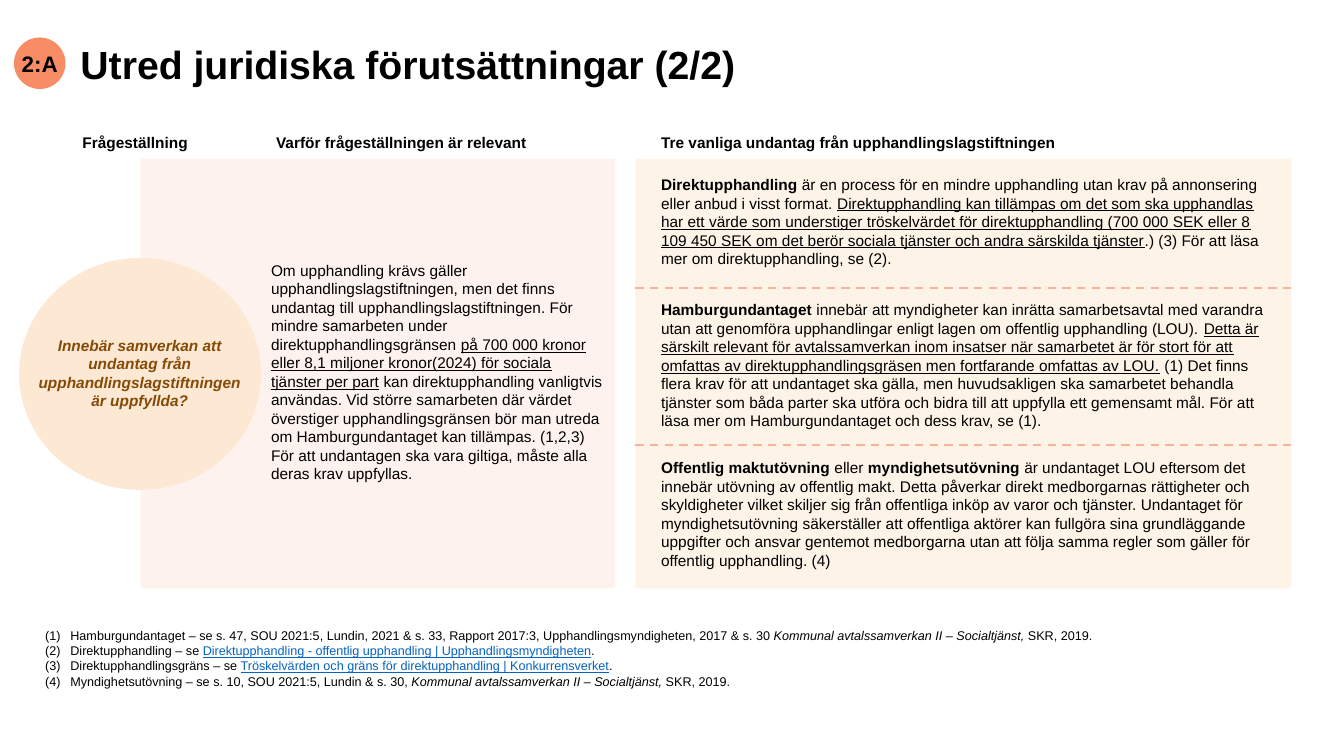
from dataclasses import dataclass

from lxml import etree
from pptx import Presentation
from pptx import util as u
from pptx.dml import color
from pptx.enum import dml, shapes, text
from pptx.oxml import ns


@dataclass(frozen=True)
class Theme:
    font: str = "Arial"
    title_size: int = 28
    badge_size: int = 16
    body_size: int = 11
    note_size: int = 9
    ink: str = "000000"
    link: str = "0563C1"
    question: str = "854A07"
    badge: str = "F88C64"
    divider: str = "FAB398"
    sand: str = "FDE9D3"
    rose: str = "FDD9CB"


class SlideBuilder:
    def __init__(self, slide, theme):
        self.slide = slide
        self.theme = theme

    def add_runs(self, paragraph, runs, size, ink):
        """Each run is (text, flags): b bold, i italic, u underline, l link colour."""
        for wording, flags in runs:
            run = paragraph.add_run()
            run.text = wording
            font = run.font
            font.name, font.size = self.theme.font, u.Pt(size)
            font.bold, font.italic = "b" in flags, "i" in flags
            font.underline = "u" in flags
            run_ink = self.theme.link if "l" in flags else ink
            font.color.rgb = color.RGBColor.from_string(run_ink)

    def text_box(self, box, paragraphs, size=None, ink=None, centred=False,
                 numbered=False, line_spacing=None):
        shape = self.slide.shapes.add_textbox(*map(u.Pt, box))
        frame = shape.text_frame
        frame.word_wrap = True
        for index, runs in enumerate(paragraphs):
            paragraph = frame.add_paragraph() if index else frame.paragraphs[0]
            if centred:
                paragraph.alignment = text.PP_ALIGN.CENTER
            if line_spacing:
                paragraph.line_spacing = line_spacing
            if numbered:
                self.number(paragraph)
            self.add_runs(paragraph, runs, size or self.theme.body_size,
                          ink or self.theme.ink)

    def number(self, paragraph):
        """Give the paragraph an automatic (1), (2) ... and a hanging indent."""
        properties = paragraph._p.get_or_add_pPr()
        properties.set("marL", str(u.Pt(18)))
        properties.set("indent", str(-u.Pt(18)))
        etree.SubElement(properties, ns.qn("a:buFont"), typeface=self.theme.font)
        etree.SubElement(properties, ns.qn("a:buAutoNum"), type="arabicParenBoth")

    def filled_shape(self, kind, box, fill, opacity=100):
        shape = self.slide.shapes.add_shape(kind, *map(u.Pt, box))
        shape.shadow.inherit = False
        shape.line.fill.background()
        shape.fill.solid()
        shape.fill.fore_color.rgb = color.RGBColor.from_string(fill)
        if opacity < 100:
            tint = shape._element.spPr.find(".//" + ns.qn("a:srgbClr"))
            etree.SubElement(tint, ns.qn("a:alpha"), val=str(opacity * 1000))
        return shape

    def badge(self, box, label):
        shape = self.filled_shape(shapes.MSO_SHAPE.OVAL, box, self.theme.badge)
        frame = shape.text_frame
        frame.margin_left = frame.margin_right = 0
        frame.margin_top = frame.margin_bottom = 0
        frame.vertical_anchor = text.MSO_ANCHOR.MIDDLE
        frame.paragraphs[0].alignment = text.PP_ALIGN.CENTER
        self.add_runs(frame.paragraphs[0], [(label, "b")],
                      self.theme.badge_size, self.theme.ink)

    def divider(self, left, right, top):
        line = self.slide.shapes.add_connector(
            shapes.MSO_CONNECTOR.STRAIGHT, *map(u.Pt, (left, top, right, top)))
        line.line.color.rgb = color.RGBColor.from_string(self.theme.divider)
        line.line.width = u.Pt(1.5)
        line.line.dash_style = dml.MSO_LINE.DASH
        etree.SubElement(line._element.spPr, ns.qn("a:effectLst"))


HEADINGS = [
    (51.8, 97, "Frågeställning"),
    (190.1, 211, "Varför frågeställningen är relevant"),
    (465.1, 322, "Tre vanliga undantag från upphandlingslagstiftningen"),
]

RELEVANCE = [
    ("Om upphandling krävs gäller upphandlingslagstiftningen, men det finns undantag "
     "till upphandlingslagstiftningen. För mindre samarbeten under "
     "direktupphandlingsgränsen ", ""),
    ("på 700 000 kronor eller 8,1 miljoner kronor(2024) för sociala tjänster per part", "u"),
    (" kan direktupphandling vanligtvis användas. Vid större samarbeten där värdet "
     "överstiger upphandlingsgränsen bör man utreda om Hamburgundantaget kan tillämpas. "
     "(1,2,3) För att undantagen ska vara giltiga, måste alla deras krav uppfyllas.", ""),
]

EXCEPTIONS = [
    ((465.1, 121.7, 442, 74), [
        ("Direktupphandling ", "b"),
        ("är en process för en mindre upphandling utan krav på annonsering eller anbud "
         "i visst format. ", ""),
        ("Direktupphandling kan tillämpas om det som ska upphandlas har ett värde som "
         "understiger tröskelvärdet för direktupphandling (700 000 SEK eller 8 109 450 SEK "
         "om det berör sociala tjänster och andra särskilda tjänster", "u"),
        (".) (3) För att läsa mer om direktupphandling, se (2).", ""),
    ]),
    ((465.1, 211, 457, 101), [
        ("Hamburgundantaget", "b"),
        (" innebär att myndigheter kan inrätta samarbetsavtal med varandra utan att "
         "genomföra upphandlingar enligt lagen om offentlig upphandling (LOU). ", ""),
        ("Detta är särskilt relevant för avtalssamverkan inom insatser när samarbetet är "
         "för stort för att omfattas av direktupphandlingsgräsen men fortfarande omfattas "
         "av LOU.", "u"),
        (" (1) Det finns flera krav för att undantaget ska gälla, men huvudsakligen ska "
         "samarbetet behandla tjänster som båda parter ska utföra och bidra till att "
         "uppfylla ett gemensamt mål. För att läsa mer om Hamburgundantaget och dess krav, "
         "se (1).", ""),
    ]),
    ((465.1, 324, 442, 87), [
        ("Offentlig maktutövning ", "b"),
        ("eller ", ""),
        ("myndighetsutövning ", "b"),
        ("är undantaget LOU eftersom det innebär utövning av offentlig makt. Detta påverkar "
         "direkt medborgarnas rättigheter och skyldigheter vilket skiljer sig från "
         "offentliga inköp av varor och tjänster. Undantaget för myndighetsutövning "
         "säkerställer att offentliga aktörer kan fullgöra sina grundläggande uppgifter och "
         "ansvar gentemot medborgarna utan att följa samma regler som gäller för offentlig "
         "upphandling. (4)", ""),
    ]),
]

REPORT = [("Kommunal avtalssamverkan II – Socialtjänst, ", "i"), ("SKR, 2019.", "")]
REFERENCES = [
    [("Hamburgundantaget – se s. 47, SOU 2021:5, Lundin, 2021 & s. 33, Rapport 2017:3, "
      "Upphandlingsmyndigheten, 2017 & s. 30 ", ""), *REPORT],
    [("Direktupphandling – se ", ""),
     ("Direktupphandling - offentlig upphandling | Upphandlingsmyndigheten", "ul"),
     (".", "")],
    [("Direktupphandlingsgräns – se ", ""),
     ("Tröskelvärden och gräns för direktupphandling | Konkurrensverket", "ul"),
     (".", "")],
    [("Myndighetsutövning – se s. 10, SOU 2021:5, Lundin & s. 30, ", ""), *REPORT],
]


def main():
    presentation = Presentation()
    presentation.slide_width, presentation.slide_height = u.Pt(960), u.Pt(540)
    theme = Theme()
    slide = presentation.slides.add_slide(presentation.slide_layouts[6])
    builder = SlideBuilder(slide, theme)

    panel_top, panel_height = 113.4, 306.8
    exceptions_left, exceptions_width = 453.8, 468.6
    rectangle = shapes.MSO_SHAPE.RECTANGLE
    builder.filled_shape(
        rectangle, (exceptions_left, panel_top, exceptions_width, panel_height),
        theme.sand, 53)
    builder.filled_shape(rectangle, (100.4, panel_top, 339, panel_height), theme.rose, 32)

    builder.badge((10, 26.8, 36.8, 36.8), "2:A")
    builder.text_box((50.4, 27.4, 756.7, 49.7), [[("Utred juridiska förutsättningar (2/2)", "b")]],
                     theme.title_size, line_spacing=0.95)
    for left, width, heading in HEADINGS:
        builder.text_box((left, 91.4, width, 20.6), [[(heading, "b")]])

    builder.text_box((186.5, 182.9, 252.7, 167), [RELEVANCE])
    for box, runs in EXCEPTIONS:
        builder.text_box(box, [runs])
    for top in (205.5, 318):
        builder.divider(exceptions_left, exceptions_left + exceptions_width, top)

    builder.filled_shape(shapes.MSO_SHAPE.OVAL, (13.7, 184.3, 172.8, 165.6), theme.sand)
    question = ("Innebär samverkan att undantag från upphandlingslagstiftningen "
                "är uppfyllda?")
    builder.text_box((18.2, 236.2, 163.4, 60.5), [[(question, "bi")]],
                     ink=theme.question, centred=True)

    builder.text_box((25.2, 445, 827, 51), REFERENCES, theme.note_size, numbered=True)
    presentation.save("out.pptx")


if __name__ == "__main__":
    main()
